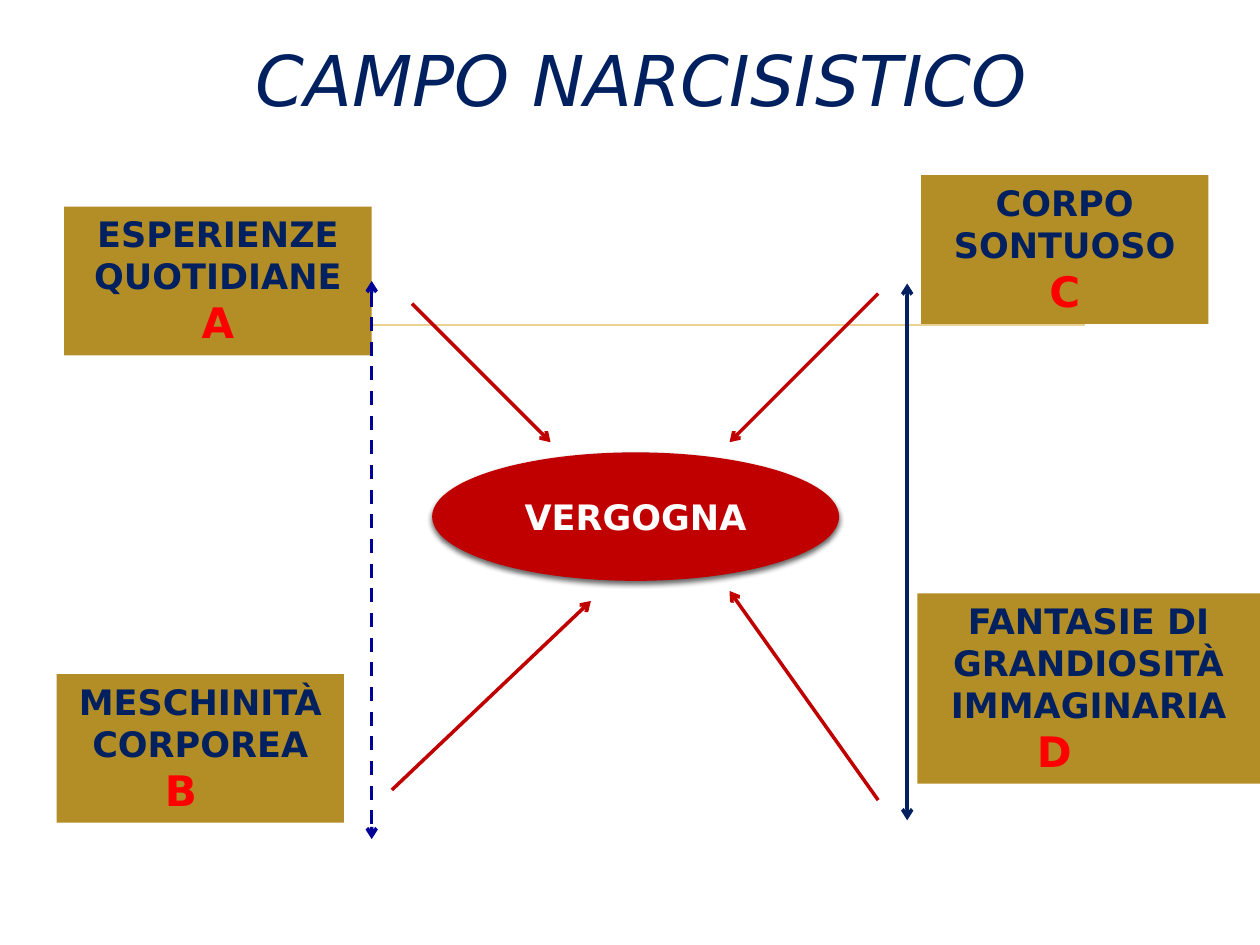
from lxml import etree
from pptx import Presentation
from pptx.dml.color import RGBColor
from pptx.enum import dml, shapes, text
from pptx.oxml import ns
from pptx.util import Inches, Pt

NAVY = RGBColor(0x00, 0x20, 0x60)
BLUE = RGBColor(0x00, 0x00, 0x99)
GOLD = RGBColor(0xB3, 0x8D, 0x25)
PALE_GOLD = RGBColor(0xE8, 0xD1, 0x91)
CRIMSON = RGBColor(0xC0, 0x00, 0x00)
RED = RGBColor(0xFF, 0x00, 0x00)
WHITE = RGBColor(0xFF, 0xFF, 0xFF)
FONT = "DejaVu Sans"


def add_shadow(parent):
    """Append a soft black shadow falling straight down."""
    effects = etree.SubElement(parent, ns.qn("a:effectLst"))
    shadow = etree.SubElement(effects, ns.qn("a:outerShdw"), blurRad=str(Pt(3)),
                              dist=str(Pt(2)), dir="5400000", rotWithShape="0")
    color = etree.SubElement(shadow, ns.qn("a:srgbClr"), val="000000")
    etree.SubElement(color, ns.qn("a:alpha"), val="60000")


def add_line(start, end, color, width=2, ends=("tailEnd",), dash=None):
    line = slide.shapes.add_connector(
        shapes.MSO_CONNECTOR.STRAIGHT, *[Inches(v) for v in start + end])
    line.line.color.rgb = color
    line.line.width = Pt(width)
    if dash:
        line.line.dash_style = dash
    ln = line.line._get_or_add_ln()
    for tag in ends:
        etree.SubElement(ln, ns.qn("a:" + tag), type="arrow")
    etree.SubElement(line._element.spPr, ns.qn("a:effectLst"))
    return line


prs = Presentation()
prs.slide_width, prs.slide_height = Inches(10), Inches(7.5)
slide = prs.slides.add_slide(prs.slide_layouts[5])

add_line((1.4, 2.58), (8.61, 2.58), PALE_GOLD, width=1.25, ends=())

title = slide.shapes.title
title.left, title.top = Inches(0.59), Inches(0)
title.width, title.height = Inches(9), Inches(1.25)
title.text_frame.vertical_anchor = text.MSO_ANCHOR.MIDDLE
p = title.text_frame.paragraphs[0]
p.alignment = text.PP_ALIGN.CENTER
r = p.add_run()
r.text = "CAMPO NARCISISTICO"
r.font.size, r.font.italic = Pt(40), True
r.font.color.rgb = NAVY
add_shadow(r._r.get_or_add_rPr())
r.font.name = FONT

# label, letter, position and size, indent of the letter (None: centred)
BOXES = [
    ("ESPERIENZE QUOTIDIANE", "A", (0.51, 1.64, 2.44, 1.18), None),
    ("MESCHINITÀ CORPOREA", "B", (0.45, 5.35, 2.28, 1.18), 0.76),
    ("CORPO SONTUOSO", "C", (7.31, 1.39, 2.28, 1.18), None),
    ("FANTASIE DI GRANDIOSITÀ IMMAGINARIA", "D", (7.28, 4.71, 2.72, 1.51), 0.85),
]
boxes = {}
for label, letter, place, indent in BOXES:
    sp = slide.shapes.add_shape(shapes.MSO_SHAPE.RECTANGLE, *[Inches(v) for v in place])
    sp.shadow.inherit = False
    sp.fill.solid()
    sp.fill.fore_color.rgb = GOLD
    sp.line.fill.background()
    tf = sp.text_frame
    tf.word_wrap = True
    tf.auto_size = text.MSO_AUTO_SIZE.SHAPE_TO_FIT_TEXT
    tf.vertical_anchor = text.MSO_ANCHOR.TOP
    tf.text = label + "\n" + letter
    for p, size, color in zip(tf.paragraphs, (20, 24), (NAVY, RED)):
        p.alignment = text.PP_ALIGN.CENTER
        p.font.name, p.font.size, p.font.bold = FONT, Pt(size), True
        p.font.color.rgb = color
    if indent:
        p = tf.paragraphs[1]
        p.alignment = text.PP_ALIGN.LEFT
        p._p.get_or_add_pPr().set("marL", str(Inches(indent)))
    boxes[letter] = sp

sp = slide.shapes.add_shape(shapes.MSO_SHAPE.OVAL, Inches(3.43), Inches(3.59),
                            Inches(3.23), Inches(1.02))
sp.fill.solid()
sp.fill.fore_color.rgb = CRIMSON
sp.line.fill.background()
add_shadow(sp._element.spPr)
tf = sp.text_frame
tf.vertical_anchor = text.MSO_ANCHOR.MIDDLE
p = tf.paragraphs[0]
p.text = "VERGOGNA"
p.alignment = text.PP_ALIGN.CENTER
p.font.name, p.font.size, p.font.bold = FONT, Pt(20), True
p.font.color.rgb = WHITE

for start, end in [((3.27, 2.41), (4.37, 3.51)), ((3.11, 6.27), (4.69, 4.77)),
                   ((6.97, 2.33), (5.79, 3.51)), ((6.97, 6.35), (5.79, 4.69))]:
    add_line(start, end, CRIMSON)

BOTH_ENDS = ("headEnd", "tailEnd")
add_line((7.2, 2.25), (7.2, 6.51), NAVY, ends=BOTH_ENDS)
dashed = add_line((2.95, 2.25), (2.95, 6.66), BLUE, ends=BOTH_ENDS,
                  dash=dml.MSO_LINE.DASH)
dashed.begin_connect(boxes["A"], 3)

prs.save("out.pptx")
